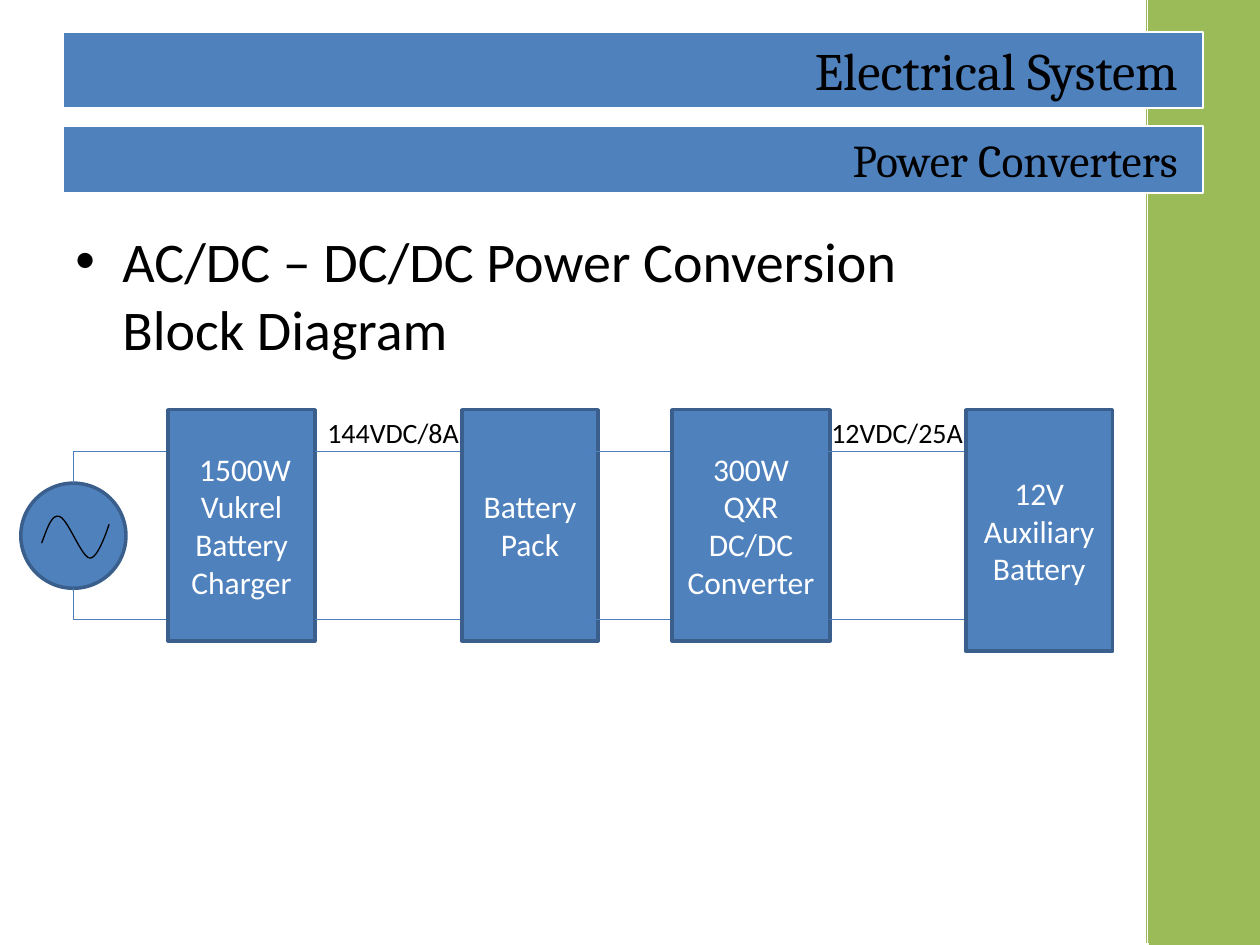
from dataclasses import dataclass

import lxml.etree
import pptx
import pptx.dml.color
import pptx.enum.dml
import pptx.enum.shapes
import pptx.enum.text
import pptx.oxml.ns
import pptx.util

Cm = pptx.util.Cm
Pt = pptx.util.Pt
RGBColor = pptx.dml.color.RGBColor
Shape = pptx.enum.shapes.MSO_SHAPE
Connector = pptx.enum.shapes.MSO_CONNECTOR
Align = pptx.enum.text.PP_ALIGN
Anchor = pptx.enum.text.MSO_ANCHOR
qn = pptx.oxml.ns.qn

BLUE = RGBColor(0x4F, 0x81, 0xBD)
EDGE = RGBColor(0x3A, 0x5F, 0x8C)
WIRE = RGBColor(0x4B, 0x7E, 0xBC)
GREEN = RGBColor(0x9B, 0xBB, 0x59)
BLACK = RGBColor(0, 0, 0)
WHITE = RGBColor(0xFF, 0xFF, 0xFF)

ROW_TOP = 8.26
UPPER_WIRE = 9.1
LOWER_WIRE = 12.49
SOURCE_X = 1.48


@dataclass(frozen=True)
class Banner:
    text: str
    top: float
    height: float
    size: int


@dataclass(frozen=True)
class Block:
    lines: tuple[str, ...]
    left: float
    width: float
    height: float = 4.66


@dataclass(frozen=True)
class Link:
    upper: tuple[float, float]
    lower: tuple[float, float]


BANNERS = (
    Banner("Electrical System", 0.64, 1.54, 30),
    Banner("Power Converters", 2.54, 1.36, 26),
)
BLOCKS = (
    Block((" 1500W Vukrel", "Battery Charger"), 3.39, 2.96),
    Block(("Battery Pack",), 9.31, 2.75),
    Block(("300W QXR", "DC/DC Converter"), 13.55, 3.18),
    Block(("12V Auxiliary Battery",), 19.47, 2.96, 4.87),
)
LINKS = (
    Link((6.35, 9.74), (6.35, 9.95)),
    Link((11.85, 15.24), (11.85, 15.45)),
    Link((16.51, 19.9), (16.72, 20.32)),
)
VOLTAGES = (("12VDC/25A", 16.51), ("144VDC/8A", 6.35))
SINE_CURVES = (
    ((0.84, 10.95), (0.95, 10.66), (1.04, 10.36), (1.2, 10.41)),
    ((1.2, 10.41), (1.37, 10.46), (1.64, 11.23), (1.81, 11.25)),
    ((1.81, 11.25), (1.98, 11.28), (2.2, 10.57), (2.2, 10.57)),
)


def write(paragraph, lines: tuple[str, ...], size: int, color: RGBColor,
          font: str = "Calibri") -> None:
    for index, line in enumerate(lines):
        if index:
            paragraph.add_line_break()
        run = paragraph.add_run()
        run.text = line
        run.font.size = Pt(size)
        run.font.name = font
        run.font.color.rgb = color


def add_solid(slide, kind, left: float, top: float, width: float, height: float,
              fill: RGBColor, edge: RGBColor | None = None, weight: float = 2):
    solid = slide.shapes.add_shape(kind, Cm(left), Cm(top), Cm(width), Cm(height))
    solid.shadow.inherit = False
    solid.fill.solid()
    solid.fill.fore_color.rgb = fill
    if edge is None:
        solid.line.fill.background()
    else:
        solid.line.color.rgb = edge
        solid.line.width = Pt(weight)
    return solid


def add_sidebar(slide) -> None:
    add_solid(slide, Shape.RECTANGLE, 23.16, 0, 2.24, 19.05, GREEN)
    stripe = add_solid(slide, Shape.RECTANGLE, 23.06, 0, 0.1, 19.02, GREEN)
    stripe.fill.patterned()
    stripe.fill.pattern = pptx.enum.dml.MSO_PATTERN.LIGHT_VERTICAL
    stripe.fill.fore_color.rgb = GREEN
    stripe.fill.back_color.rgb = WHITE


def add_banner(slide, banner: Banner) -> None:
    bar = add_solid(slide, Shape.RECTANGLE, 1.27, banner.top, 22.99, banner.height,
                    BLUE, WHITE, 1)
    frame = bar.text_frame
    frame.margin_left = frame.margin_right = Cm(0.51)
    frame.vertical_anchor = Anchor.MIDDLE
    paragraph = frame.paragraphs[0]
    paragraph.alignment = Align.RIGHT
    write(paragraph, (banner.text,), banner.size, BLACK, "Cambria")


def add_text(slide, lines: tuple[str, ...], left: float, top: float, width: float,
             height: float, size: int):
    frame = slide.shapes.add_textbox(Cm(left), Cm(top), Cm(width), Cm(height)).text_frame
    frame.word_wrap = True
    write(frame.paragraphs[0], lines, size, BLACK)
    return frame.paragraphs[0]


def add_topic(slide) -> None:
    topic = add_text(slide, ("AC/DC – DC/DC Power Conversion ", "Block Diagram"),
                     1.27, 4.45, 22.86, 12.57, 32)
    topic.space_before = Pt(6.4)
    properties = topic._p.get_or_add_pPr()
    properties.set("marL", str(Cm(0.95)))
    properties.set("indent", str(-Cm(0.95)))
    lxml.etree.SubElement(properties, qn("a:buFont")).set("typeface", "Arial")
    lxml.etree.SubElement(properties, qn("a:buChar")).set("char", "•")


def add_wire(slide, start: tuple[float, float], end: tuple[float, float],
             kind=Connector.STRAIGHT):
    wire = slide.shapes.add_connector(kind, *(Cm(value) for value in start + end))
    wire.line.color.rgb = WIRE
    wire.line.width = Pt(0.75)
    lxml.etree.SubElement(wire._element.spPr, qn("a:effectLst"))
    return wire


def add_corner_wire(slide, wire_y: float, source_y: float) -> None:
    wire = add_wire(slide, (4.65, wire_y), (SOURCE_X, source_y), Connector.ELBOW)
    wire._element.spPr.find(qn("a:prstGeom")).set("prst", "bentConnector2")


def add_block(slide, block: Block) -> None:
    box = add_solid(slide, Shape.RECTANGLE, block.left, ROW_TOP, block.width,
                    block.height, BLUE, EDGE)
    box.text_frame.word_wrap = True
    box.text_frame.vertical_anchor = Anchor.MIDDLE
    paragraph = box.text_frame.paragraphs[0]
    paragraph.alignment = Align.CENTER
    write(paragraph, block.lines, 18, WHITE)


def curve_points(curve, steps: int = 12) -> list[tuple[int, int]]:
    points = []
    for step in range(1, steps + 1):
        t = step / steps
        weights = ((1 - t) ** 3, 3 * t * (1 - t) ** 2, 3 * t * t * (1 - t), t ** 3)
        x, y = (sum(w * point[axis] for w, point in zip(weights, curve)) for axis in (0, 1))
        points.append((Cm(x), Cm(y)))
    return points


def add_source(slide) -> None:
    add_solid(slide, Shape.OVAL, 0.42, 9.74, 2.12, 2.12, BLUE, EDGE)
    start_x, start_y = SINE_CURVES[0][0]
    builder = slide.shapes.build_freeform(Cm(start_x), Cm(start_y))
    for curve in SINE_CURVES:
        builder.add_line_segments(curve_points(curve), close=False)
    sine = builder.convert_to_shape()
    sine.shadow.inherit = False
    sine.fill.background()
    sine.line.color.rgb = BLACK
    sine.line.width = Pt(0.75)


def main() -> None:
    deck = pptx.Presentation()
    deck.slide_width, deck.slide_height = Cm(25.4), Cm(19.05)
    slide = deck.slides.add_slide(deck.slide_layouts[6])
    add_sidebar(slide)
    add_topic(slide)
    for banner in BANNERS:
        add_banner(slide, banner)
    for voltage, left in VOLTAGES:
        add_text(slide, (voltage,), left, ROW_TOP, 3.18, 0.94, 16)
    add_source(slide)
    add_corner_wire(slide, UPPER_WIRE, 9.74)
    add_corner_wire(slide, LOWER_WIRE, 11.86)
    add_block(slide, BLOCKS[0])
    for link, block in zip(LINKS, BLOCKS[1:]):
        for (start, end), y in ((link.upper, UPPER_WIRE), (link.lower, LOWER_WIRE)):
            add_wire(slide, (start, y), (end, y))
        add_block(slide, block)
    deck.save("out.pptx")


if __name__ == "__main__":
    main()
